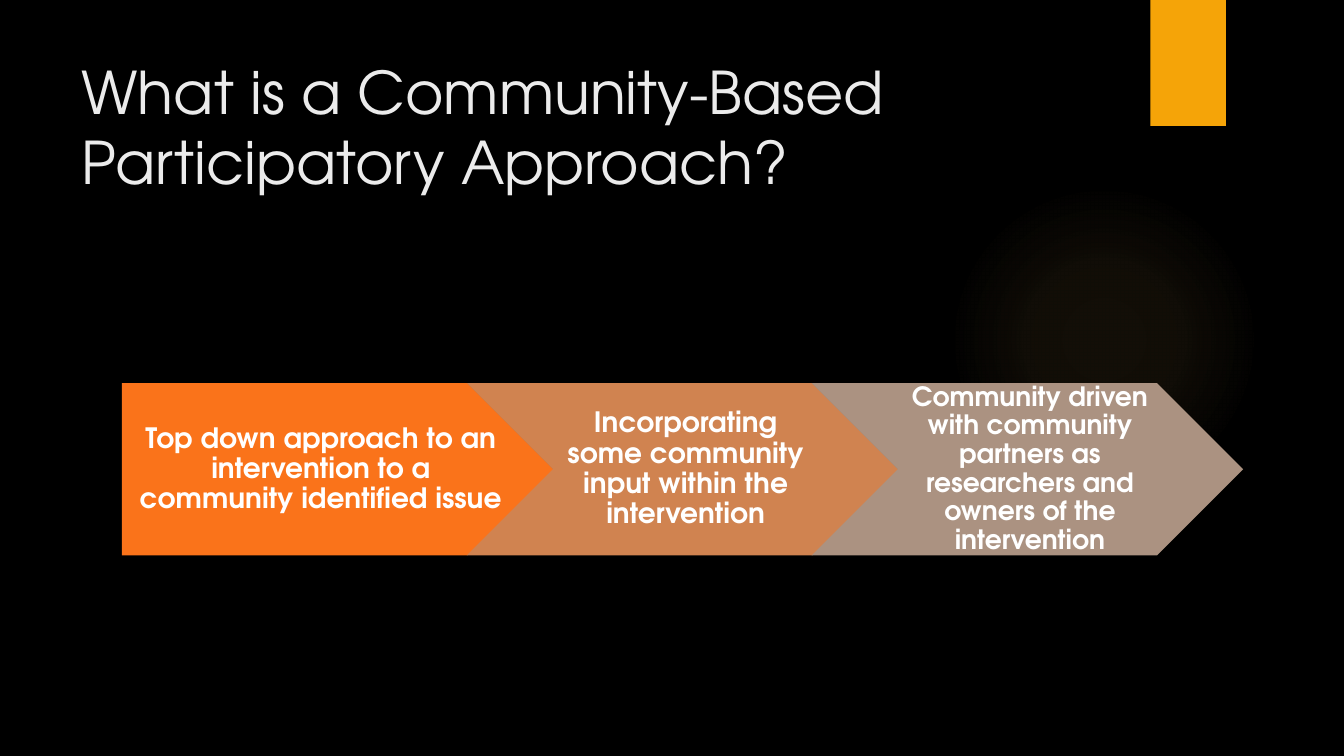
from dataclasses import dataclass

from lxml import etree
from pptx import Presentation
from pptx.dml.color import RGBColor
from pptx.enum import shapes as kinds, text as texts
from pptx.oxml import ns
from pptx.shapes.autoshape import Shape
from pptx.slide import Slide
from pptx.util import Inches, Pt

BLACK = RGBColor(0x00, 0x00, 0x00)
GOLD = RGBColor(0xF5, 0xA4, 0x08)
PALE = RGBColor(0xEB, 0xEB, 0xEB)
WHITE = RGBColor(0xFF, 0xFF, 0xFF)
ORANGE = RGBColor(0xFA, 0x73, 0x1A)
COPPER = RGBColor(0xD0, 0x83, 0x50)
TAUPE = RGBColor(0xAB, 0x92, 0x81)
GLOW = RGBColor(0xFA, 0xC9, 0x6A)
FONT = "TeX Gyre Adventor"
KIND = kinds.MSO_SHAPE

LEFT, TOP, WIDTH, HEIGHT = 1.21, 3.8, 4.28, 1.71
STEP = 3.42
POINT = HEIGHT / 2


@dataclass
class Stage:
    label: str
    kind: KIND
    fill: RGBColor
    size: int
    inset: float


STAGES = [
    Stage("Top down approach to an intervention to a community identified issue",
          KIND.PENTAGON, ORANGE, 20, 0.12),
    Stage("Incorporating some community input within the intervention",
          KIND.CHEVRON, COPPER, 20, 0.09),
    Stage("Community driven with community partners as researchers and owners "
          "of the intervention",
          KIND.CHEVRON, TAUPE, 19, 0.08),
]


def add_block(slide: Slide, kind: KIND, left: float, top: float,
              width: float, height: float, fill: RGBColor) -> Shape:
    block = slide.shapes.add_shape(
        kind, Inches(left), Inches(top), Inches(width), Inches(height))
    block.shadow.inherit = False
    block.fill.solid()
    block.fill.fore_color.rgb = fill
    block.line.fill.background()
    return block


def add_label(slide: Slide, label: str, left: float, top: float,
              width: float, height: float, size: int, color: RGBColor) -> Shape:
    box = slide.shapes.add_textbox(
        Inches(left), Inches(top), Inches(width), Inches(height))
    frame = box.text_frame
    frame.word_wrap = True
    line = frame.paragraphs[0]
    line.text = label
    line.font.name = FONT
    line.font.size = Pt(size)
    line.font.color.rgb = color
    return box


def add_glow(slide: Slide) -> None:
    glow = add_block(slide, KIND.OVAL, 9.41, 1.83, 3.08, 3.08, GLOW)
    stops = "".join(
        f'<a:gs pos="{place * 1000}"><a:srgbClr val="{GLOW}">'
        f'<a:alpha val="{alpha * 1000}"/></a:srgbClr></a:gs>'
        for place, alpha in ((0, 7), (36, 6), (69, 0), (100, 0)))
    blend = etree.fromstring(
        f'<a:gradFill {ns.nsdecls("a")}><a:gsLst>{stops}</a:gsLst>'
        '<a:path path="circle"><a:fillToRect l="50000" t="50000" '
        'r="50000" b="50000"/></a:path></a:gradFill>')
    solid = glow.element.spPr.find(ns.qn("a:solidFill"))
    solid.getparent().replace(solid, blend)


def add_stage(slide: Slide, rank: int, stage: Stage) -> None:
    left = LEFT + rank * STEP
    add_block(slide, stage.kind, left, TOP, WIDTH, HEIGHT, stage.fill)
    notch = POINT if stage.kind == KIND.CHEVRON else 0
    width = WIDTH - notch - POINT / (1 if notch else 2)
    box = add_label(slide, stage.label, left + notch, TOP, width, HEIGHT,
                    stage.size, WHITE)
    frame = box.text_frame
    frame.vertical_anchor = texts.MSO_ANCHOR.MIDDLE
    frame.margin_left = Inches(stage.inset)
    frame.margin_right = Inches(0.03)
    frame.margin_top = frame.margin_bottom = Inches(0.06)
    line = frame.paragraphs[0]
    line.alignment = texts.PP_ALIGN.CENTER
    line.line_spacing = 0.9
    line.font.bold = True


def main() -> None:
    deck = Presentation()
    deck.slide_width = Inches(13.33)
    deck.slide_height = Inches(7.5)
    slide = deck.slides.add_slide(deck.slide_layouts[6])
    back = slide.background.fill
    back.solid()
    back.fore_color.rgb = BLACK

    add_glow(slide)
    add_block(slide, KIND.RECTANGLE, 11.41, 0, 0.75, 1.25, GOLD)
    add_label(slide, "What is a Community-Based Participatory Approach?",
              0.71, 0.5, 10.29, 1.53, 42, PALE)
    for rank, stage in enumerate(STAGES):
        add_stage(slide, rank, stage)
    deck.save("out.pptx")


if __name__ == "__main__":
    main()
